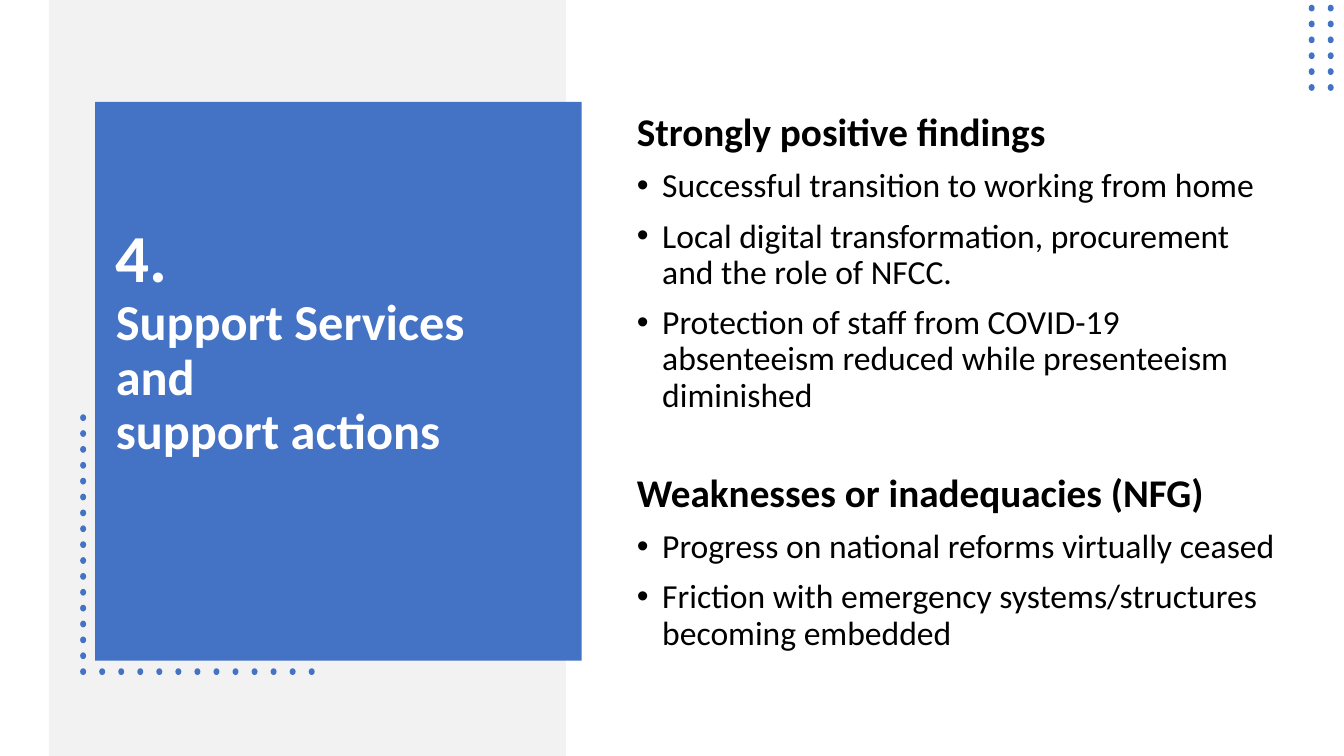
from lxml.etree import SubElement
from pptx import Presentation
from pptx.dml.color import RGBColor
from pptx.enum.shapes import MSO_SHAPE
from pptx.enum.text import MSO_ANCHOR
from pptx.oxml.ns import qn
from pptx.util import Cm, Pt

BLUE = "4472C4"
GREY = "F2F2F2"
WHITE = "FFFFFF"
BLACK = "000000"
DOT_STEP_X, DOT_STEP_Y = 0.48, 0.4

TITLE_LINES = ["4.", "Support Services", "and", "support actions"]
SECTIONS = [
    ("Strongly positive findings", [
        "Successful transition to working from home",
        "Local digital transformation, procurement and the role of NFCC.",
        "Protection of staff from COVID-19 absenteeism reduced while "
        "presenteeism diminished",
    ]),
    ("Weaknesses or inadequacies (NFG)", [
        "Progress on national reforms virtually ceased",
        "Friction with emergency systems/structures becoming embedded",
    ]),
]


def colour(value):
    return RGBColor.from_string(value)


def add_filled(shapes, kind, left, top, width, height, fill):
    shape = shapes.add_shape(kind, Cm(left), Cm(top), Cm(width), Cm(height))
    shape.shadow.inherit = False
    shape.fill.solid()
    shape.fill.fore_color.rgb = colour(fill)
    shape.line.fill.background()
    return shape


def add_dots(page, left, top, cells):
    """Group of dots, one for each (column, row) cell."""
    group = page.shapes.add_group_shape()
    for column, row in cells:
        dot = add_filled(group.shapes, MSO_SHAPE.OVAL,
                         left + column * DOT_STEP_X, top + row * DOT_STEP_Y,
                         0.17, 0.15, BLUE)
        dot.rotation = 90


def add_text_box(page, left, top, width, height):
    box = page.shapes.add_textbox(Cm(left), Cm(top), Cm(width), Cm(height))
    box.text_frame.word_wrap = True
    box.text_frame.vertical_anchor = MSO_ANCHOR.MIDDLE
    return box.text_frame


def format_span(span, size, fill, bold):
    span.font.name = "Calibri"
    span.font.size = Pt(size)
    span.font.bold = bold
    span.font.color.rgb = colour(fill)


def add_title(page):
    frame = add_text_box(page, 2.67, 3.68, 12.19, 11.89)
    frame.margin_bottom = Cm(2.1)
    para = frame.paragraphs[0]
    para.text = "\v".join(TITLE_LINES)
    para.line_spacing = 0.9
    for index, span in enumerate(para.runs):
        format_span(span, 36 if index else 48, WHITE, True)


def add_bullet(para):
    properties = para._p.get_or_add_pPr()
    properties.set("marL", str(Cm(0.64)))
    properties.set("indent", str(-Cm(0.64)))
    SubElement(properties, qn("a:buFont"), typeface="Arial")
    SubElement(properties, qn("a:buChar"), char="•")


def add_line(frame, text, size, bold, space_before):
    para = frame.paragraphs[0]
    if para.runs:
        para = frame.add_paragraph()
    para.text = text
    para.line_spacing = 0.9
    para.space_before = Pt(space_before)
    format_span(para.runs[0], size, BLACK, bold)
    return para


def add_findings(page):
    frame = add_text_box(page, 15.8, 1.47, 16.87, 16.33)
    for index, (heading, points) in enumerate(SECTIONS):
        add_line(frame, heading, 28, True, 42 if index else 10)
        for point in points:
            add_bullet(add_line(frame, point, 24, False, 10))


def main():
    deck = Presentation()
    deck.slide_width, deck.slide_height = Cm(33.87), Cm(19.05)
    page = deck.slides.add_slide(deck.slide_layouts[6])

    # Left panels
    add_filled(page.shapes, MSO_SHAPE.RECTANGLE, 1.23, 0, 13.03, 19.05, GREY)
    add_filled(page.shapes, MSO_SHAPE.RECTANGLE, 2.4, 2.57, 12.26, 14.08, BLUE)

    # Dotted corner: a column, then a row from its last dot
    corner = [(0, row) for row in range(17)]
    corner += [(column, 16) for column in range(1, 13)]
    add_dots(page, 2.01, 10.45, corner)

    # Title on the blue panel
    add_title(page)

    # Dotted block at the top right
    add_dots(page, 32.97, 0.13,
             [(column, row) for row in range(6) for column in range(2)])

    # Findings
    add_findings(page)
    deck.save("out.pptx")


if __name__ == "__main__":
    main()
